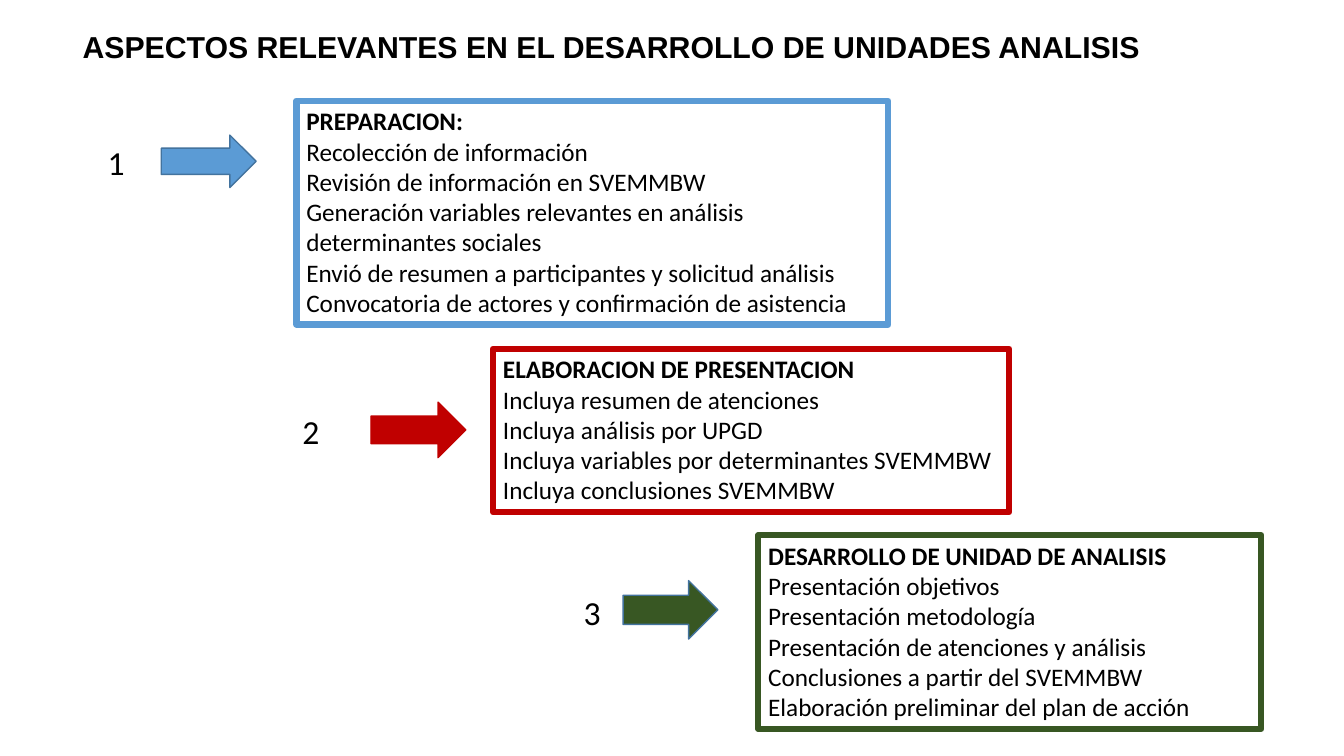
from pptx import Presentation
from pptx.dml.color import RGBColor
from pptx.enum.shapes import MSO_SHAPE
from pptx.enum.text import MSO_ANCHOR
from pptx.util import Inches, Pt

BLACK = RGBColor(0x00, 0x00, 0x00)
BLUE = RGBColor(0x5B, 0x9B, 0xD5)
DARK_BLUE = RGBColor(0x43, 0x73, 0x9E)
RED = RGBColor(0xC0, 0x00, 0x00)
GREEN = RGBColor(0x38, 0x57, 0x23)

TITLE_FORMAT = {"name": "Arial", "size": Pt(21.6), "bold": True}
NUMBER_FORMAT = {"name": "Calibri", "size": Pt(24), "bold": False}
HEADING_FORMAT = {"name": "Calibri", "size": Pt(18), "bold": True}
ITEM_FORMAT = HEADING_FORMAT | {"bold": False}

# Each place is left, top, width, height in inches.
STAGES = [
    {
        "color": BLUE, "arrow_line": DARK_BLUE,
        "box": (2.94, 1, 5.87, 2.22),
        "number": (0.97, 1.36, 0.47, 0.5),
        "arrow": (1.6, 1.34, 0.94, 0.52),
        "lines": [
            "PREPARACION:",
            "Recolección de información",
            "Revisión de información en SVEMMBW",
            "Generación variables relevantes en análisis determinantes sociales",
            "Envió de resumen a participantes y solicitud análisis",
            "Convocatoria de actores y confirmación de asistencia",
        ],
    },
    {
        "color": RED, "arrow_line": RED,
        "box": (4.89, 3.46, 5.12, 1.62),
        "number": (2.9, 4.03, 0.52, 0.5),
        "arrow": (3.68, 3.99, 0.94, 0.55),
        "lines": [
            "ELABORACION DE PRESENTACION",
            "Incluya resumen de atenciones",
            "Incluya análisis por UPGD",
            "Incluya variables por determinantes SVEMMBW",
            "Incluya conclusiones SVEMMBW",
        ],
    },
    {
        "color": GREEN, "arrow_line": DARK_BLUE,
        "box": (7.52, 5.31, 4.99, 1.92),
        "number": (5.69, 5.82, 0.47, 0.5),
        "arrow": (6.18, 5.76, 0.94, 0.58),
        "lines": [
            "DESARROLLO DE UNIDAD DE ANALISIS",
            "Presentación objetivos",
            "Presentación metodología",
            "Presentación de atenciones y análisis",
            "Conclusiones a partir del SVEMMBW",
            "Elaboración preliminar del plan de acción",
        ],
    },
]


def add_text(page, place, lines, first_format, rest_format=None):
    """Add a text box with one paragraph per line; the first may differ in format."""
    box = page.shapes.add_textbox(*map(Inches, place))
    frame = box.text_frame
    frame.word_wrap = True
    for index, line in enumerate(lines):
        para = frame.add_paragraph() if index else frame.paragraphs[0]
        span = para.add_run()
        span.text = line
        span.font.color.rgb = BLACK
        for name, value in (rest_format if index else first_format).items():
            setattr(span.font, name, value)
    return box


deck = Presentation()
deck.slide_width = Inches(13.33)
deck.slide_height = Inches(7.5)
page = deck.slides.add_slide(deck.slide_layouts[6])

title = add_text(
    page, (0.72, 0.26, 11.79, 0.44),
    ["ASPECTOS RELEVANTES EN EL DESARROLLO DE UNIDADES ANALISIS"], TITLE_FORMAT,
)
title.text_frame.vertical_anchor = MSO_ANCHOR.MIDDLE
title.text_frame.paragraphs[0].line_spacing = 0.9

for number, stage in enumerate(STAGES, start=1):
    box = add_text(page, stage["box"], stage["lines"], HEADING_FORMAT, ITEM_FORMAT)
    box.line.color.rgb = stage["color"]
    box.line.width = Pt(4.5)

    add_text(page, stage["number"], [str(number)], NUMBER_FORMAT)

    arrow = page.shapes.add_shape(MSO_SHAPE.RIGHT_ARROW, *map(Inches, stage["arrow"]))
    arrow.shadow.inherit = False
    arrow.fill.solid()
    arrow.fill.fore_color.rgb = stage["color"]
    arrow.line.color.rgb = stage["arrow_line"]
    arrow.line.width = Pt(1)

deck.save("out.pptx")
